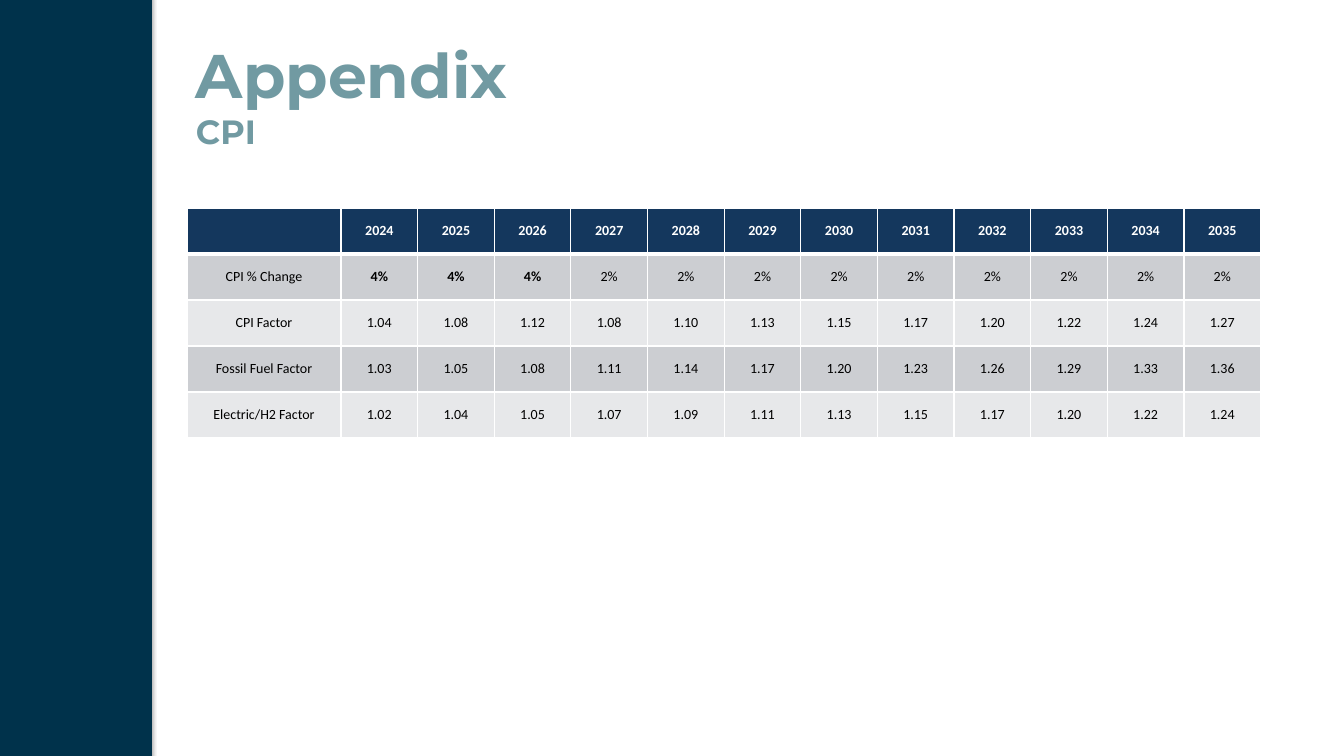
from dataclasses import dataclass

from pptx import Presentation
from pptx.dml.color import RGBColor as RGB
from pptx.enum.shapes import MSO_SHAPE as Shape
from pptx.enum.text import MSO_ANCHOR as Anchor, PP_ALIGN as Align
from pptx.oxml import parse_xml
from pptx.oxml.ns import nsdecls
from pptx.util import Emu, Pt


@dataclass(frozen=True)
class Theme:
    navy: str = "00324B"
    teal: str = "719AA2"
    head: str = "14375D"
    bands: tuple = ("CCCED2", "E7E8EA")
    white: str = "FFFFFF"
    black: str = "000000"
    title: int = 44
    sub: int = 24
    cell: int = 10
    thin: int = 1
    thick: int = 3
    bold_face: str = "Montserrat"
    face: str = "Calibri"


def px(n):
    return Emu(round(n * 914400 / 100.8))


def assign(obj, values):
    for name, value in values.items():
        setattr(obj, name, value)


class Deck:
    def __init__(self, theme):
        self.theme = theme
        self.prs = Presentation()
        assign(self.prs, {"slide_width": px(1344), "slide_height": px(756)})
        self.slide = self.prs.slides.add_slide(self.prs.slide_layouts[6])

    def style(self, run, face, size, color, bold):
        assign(run.font, {"name": face, "size": Pt(size), "bold": bold})
        run.font.color.rgb = RGB.from_string(color)

    def panel(self, box, color):
        shape = self.slide.shapes.add_shape(Shape.RECTANGLE, *map(px, box))
        shape.fill.solid()
        shape.fill.fore_color.rgb = RGB.from_string(color)
        shape.line.fill.background()
        # Soft shadow below the panel
        shape._element.spPr.append(parse_xml(
            f'<a:effectLst {nsdecls("a")}>'
            f'<a:outerShdw blurRad="{Pt(3.1)}" dist="{Pt(1.8)}" dir="5400000" rotWithShape="0">'
            f'<a:srgbClr val="{self.theme.black}"><a:alpha val="35000"/></a:srgbClr>'
            '</a:outerShdw></a:effectLst>'))

    def heading(self, box, title, sub):
        t = self.theme
        frame = self.slide.shapes.add_textbox(*map(px, box)).text_frame
        assign(frame, {"word_wrap": True, "vertical_anchor": Anchor.MIDDLE})
        para = frame.paragraphs[0]
        for text, size in ((title, t.title), (sub, t.sub)):
            if para.runs:
                para.add_line_break()
            run = para.add_run()
            run.text = text
            self.style(run, t.bold_face, size, t.teal, True)

    def cell(self, cell, text, fill, color, bold, edges):
        t = self.theme
        assign(cell, {"margin_left": 0, "margin_right": 0, "margin_top": 0,
                      "margin_bottom": 0, "vertical_anchor": Anchor.MIDDLE})
        # Borders come before the fill
        for side, width in edges.items():
            cell._tc.get_or_add_tcPr().append(parse_xml(
                f'<a:ln{side} {nsdecls("a")} w="{Pt(width)}"><a:solidFill>'
                f'<a:srgbClr val="{t.white}"/></a:solidFill></a:ln{side}>'))
        cell.fill.solid()
        cell.fill.fore_color.rgb = RGB.from_string(fill)
        if text:
            para = cell.text_frame.paragraphs[0]
            para.alignment = Align.CENTER
            run = para.add_run()
            run.text = text
            self.style(run, t.face, t.cell, color, bold)

    def table(self, box, first, rows, strong):
        t = self.theme
        count = len(rows[0])
        grid = self.slide.shapes.add_table(len(rows), count, *map(px, box)).table
        for c, col in enumerate(grid.columns):
            col.width = px(first if c == 0 else (box[2] - first) / (count - 1))
        for r, row in enumerate(rows):
            top = r == 0
            fill = t.head if top else t.bands[(r - 1) % 2]
            edges = {"L": t.thin, "R": t.thin,
                     "T": t.thick if r == 1 else t.thin,
                     "B": t.thick if top else t.thin}
            for c, text in enumerate(row):
                self.cell(grid.cell(r, c), text, fill, t.white if top else t.black,
                          top or (r, c) in strong, edges)


def main():
    theme = Theme()
    deck = Deck(theme)

    # Side panel
    deck.panel((-14, -17, 166, 791), theme.navy)

    # Title
    deck.heading((186, 31, 1128, 126), "Appendix", "CPI")

    # Price index table
    rows = [
        ["", *map(str, range(2024, 2036))],
        ["CPI % Change", *["4%"] * 3, *["2%"] * 9],
        ["CPI Factor", *"1.04 1.08 1.12 1.08 1.10 1.13 1.15 1.17 1.20 1.22 1.24 1.27".split()],
        ["Fossil Fuel Factor", *"1.03 1.05 1.08 1.11 1.14 1.17 1.20 1.23 1.26 1.29 1.33 1.36".split()],
        ["Electric/H2 Factor", *"1.02 1.04 1.05 1.07 1.09 1.11 1.13 1.15 1.17 1.20 1.22 1.24".split()],
    ]
    deck.table((187, 208, 1074, 230), 154, rows, {(1, 1), (1, 2), (1, 3)})

    deck.prs.save("out.pptx")


if __name__ == "__main__":
    main()
